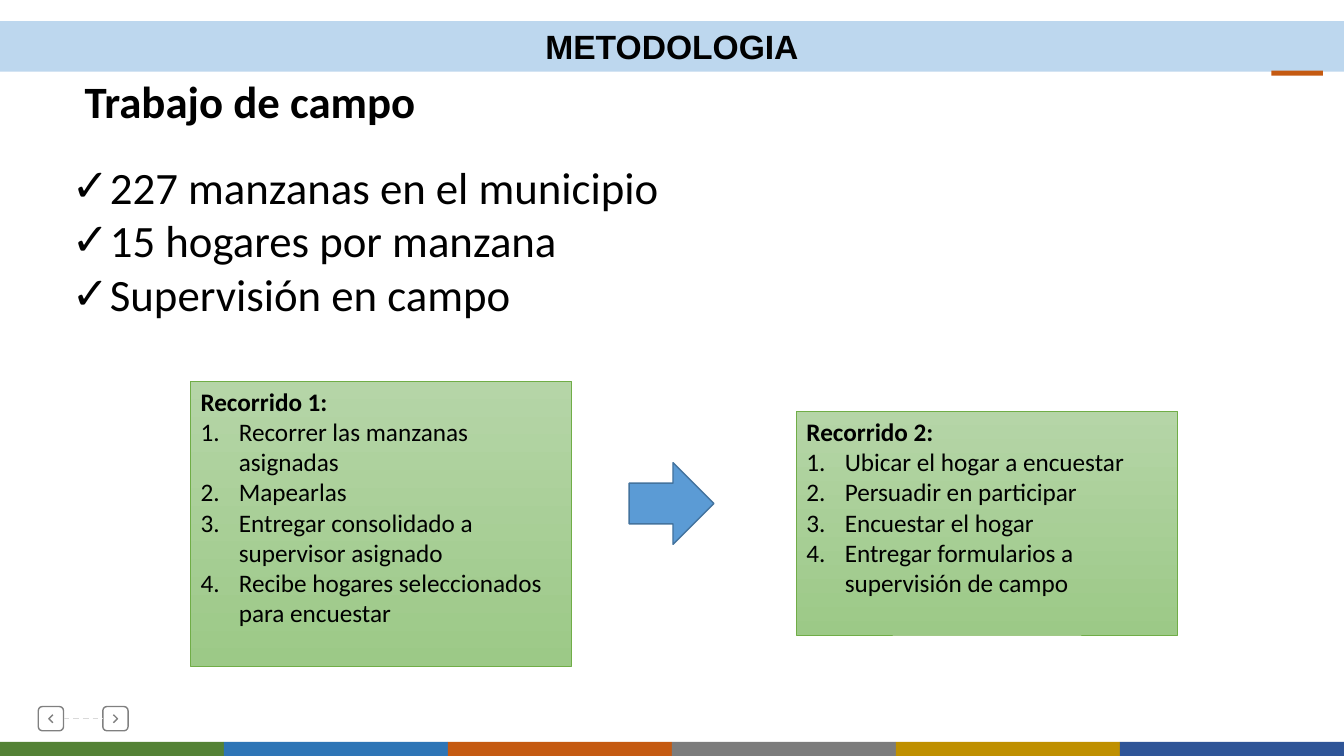
import pptx
import pptx.dml.color
import pptx.enum.dml
import pptx.enum.shapes
import pptx.enum.text
import pptx.oxml
import pptx.oxml.ns
import pptx.oxml.xmlchemy
import pptx.util

Inches = pptx.util.Inches
Pt = pptx.util.Pt
SHAPES = pptx.enum.shapes.MSO_SHAPE
ALIGN = pptx.enum.text.PP_ALIGN
ANCHOR = pptx.enum.text.MSO_ANCHOR

WIDTH, HEIGHT = 13.33, 7.5
STRIPE_COLORS = ["548235", "2E75B6", "C55A11", "7C7C7C", "BF9000", "2F5597"]


def color(hex_code):
    return pptx.dml.color.RGBColor.from_string(hex_code)


def place(shape, left, top, width, height):
    shape.left, shape.top = Inches(left), Inches(top)
    shape.width, shape.height = Inches(width), Inches(height)


def add_box(slide, kind, left, top, width, height, fill=None, line=None, line_width=1):
    box = slide.shapes.add_shape(kind, Inches(left), Inches(top), Inches(width), Inches(height))
    box.shadow.inherit = False
    if fill:
        box.fill.solid()
        box.fill.fore_color.rgb = color(fill)
    else:
        box.fill.background()
    if line:
        box.line.color.rgb = color(line)
        box.line.width = Pt(line_width)
    else:
        box.line.fill.background()
    return box


def write(paragraph, text, size, font="Calibri", bold=False, align=ALIGN.LEFT):
    paragraph.alignment = align
    paragraph.space_before = Pt(0)
    run = paragraph.add_run()
    run.text = text
    run.font.name, run.font.size, run.font.bold = font, Pt(size), bold
    run.font.color.rgb = color("000000")


def set_bullet(paragraph, tag, indent=0.38, **attributes):
    """Give the paragraph a hanging indent and a bullet element such as a:buChar."""
    properties = paragraph._p.get_or_add_pPr()
    properties.set("marL", str(Inches(indent)))
    properties.set("indent", str(-Inches(indent)))
    bullet = pptx.oxml.xmlchemy.OxmlElement(tag)
    for name, value in attributes.items():
        bullet.set(name, value)
    properties.append(bullet)


def add_paragraphs(frame, count):
    return [frame.paragraphs[0]] + [frame.add_paragraph() for _ in range(count - 1)]


def build_title_band(slide, left, top, width, height):
    add_box(slide, SHAPES.RECTANGLE, 12.61, top + height - 0.01, 0.51, 0.05, "C55A11")
    title = slide.shapes.title
    place(title, left, top, width, height)
    title.fill.solid()
    title.fill.fore_color.rgb = color("BDD7EE")
    title.text_frame.vertical_anchor = ANCHOR.MIDDLE
    write(title.text_frame.paragraphs[0], "METODOLOGIA", 24, "Arial", True, ALIGN.CENTER)


def build_heading(slide, left, top, width, height):
    heading = slide.shapes.add_textbox(Inches(left), Inches(top), Inches(width), Inches(height))
    heading.text_frame.word_wrap = True
    write(heading.text_frame.paragraphs[0], "Trabajo de campo", 32, bold=True)


def build_fieldwork_list(slide, left, top, width, height):
    fieldwork = slide.placeholders[1]
    place(fieldwork, left, top, width, height)
    frame = fieldwork.text_frame
    frame.auto_size = pptx.enum.text.MSO_AUTO_SIZE.NONE
    facts = ["227 manzanas en el municipio", "15 hogares por manzana", "Supervisión en campo"]
    for paragraph, fact in zip(add_paragraphs(frame, len(facts)), facts):
        write(paragraph, fact, 32)
        set_bullet(paragraph, "a:buChar", char="✓")


def build_round_card(slide, left, top, width, height, heading, steps):
    card = add_box(slide, SHAPES.RECTANGLE, left, top, width, height, line="70AD47", line_width=0.5)
    card.fill.gradient()
    card.fill.gradient_angle = 270
    for stop, shade in zip(card.fill.gradient_stops, ["B5D5A7", "9CC987"]):
        stop.color.rgb = color(shade)
    frame = card.text_frame
    frame.word_wrap = True
    frame.vertical_anchor = ANCHOR.TOP
    first, *rest = add_paragraphs(frame, len(steps) + 1)
    write(first, heading, 18, bold=True)
    for paragraph, step in zip(rest, steps):
        write(paragraph, step, 18)
        set_bullet(paragraph, "a:buAutoNum", type="arabicPeriod")


def build_nav_button(slide, left, top, width, height, direction):
    """Draw a button whose chevron points left (-1) or right (1)."""
    button = add_box(slide, SHAPES.ROUNDED_RECTANGLE, left, top, width, height, line="808080")
    middle_x, middle_y = left + width / 2, top + height / 2
    tail_x, tip_x = middle_x - 0.02 * direction, middle_x + 0.02 * direction
    outline = slide.shapes.build_freeform(Inches(tail_x), Inches(middle_y - 0.04))
    outline.add_line_segments(
        [(Inches(tip_x), Inches(middle_y)), (Inches(tail_x), Inches(middle_y + 0.04))], close=False)
    chevron = outline.convert_to_shape()
    chevron.shadow.inherit = False
    chevron.fill.background()
    chevron.line.color.rgb = color("808080")
    chevron.line.width = Pt(1)
    return button


def build_navigation(slide, left, top, width, height):
    side = 0.25
    back = build_nav_button(slide, left, top, side, height, -1)
    forward = build_nav_button(slide, left + width - side, top, side, height, 1)
    link = slide.shapes.add_connector(pptx.enum.shapes.MSO_CONNECTOR.STRAIGHT, 0, 0, 0, 0)
    link.begin_connect(back, 3)
    link.end_connect(forward, 1)
    link.line.color.rgb = color("D9D9D9")
    link.line.width = Pt(1)
    link.line.dash_style = pptx.enum.dml.MSO_LINE.DASH
    link._element.spPr.append(pptx.oxml.xmlchemy.OxmlElement("a:effectLst"))


def build_footer_stripes(slide, left, top, width, height):
    stripe = width / len(STRIPE_COLORS)
    for index, shade in enumerate(STRIPE_COLORS):
        add_box(slide, SHAPES.RECTANGLE, left + index * stripe, top, stripe, height, shade)


def main():
    deck = pptx.Presentation()
    deck.slide_width, deck.slide_height = Inches(WIDTH), Inches(HEIGHT)
    slide = deck.slides.add_slide(deck.slide_layouts[1])
    build_title_band(slide, 0, 0.21, WIDTH, 0.5)
    build_heading(slide, 0.74, 0.68, 10.47, 0.64)
    build_fieldwork_list(slide, 0.61, 1.53, 12.27, 1.72)
    build_round_card(slide, 1.89, 3.78, 3.78, 2.83, "Recorrido 1:", [
        "Recorrer las manzanas asignadas",
        "Mapearlas",
        "Entregar consolidado a supervisor asignado",
        "Recibe hogares seleccionados para encuestar",
    ])
    add_box(slide, SHAPES.RIGHT_ARROW, 6.24, 4.59, 0.84, 0.81, "5B9BD5", "43739E")
    build_round_card(slide, 7.9, 4.08, 3.78, 2.22, "Recorrido 2:", [
        "Ubicar el hogar a encuestar",
        "Persuadir en participar",
        "Encuestar el hogar",
        "Entregar formularios a supervisión de campo",
    ])
    build_navigation(slide, 0.38, 7.01, 0.89, 0.24)
    build_footer_stripes(slide, 0, 7.36, WIDTH, 0.15)
    deck.save("out.pptx")


if __name__ == "__main__":
    main()
